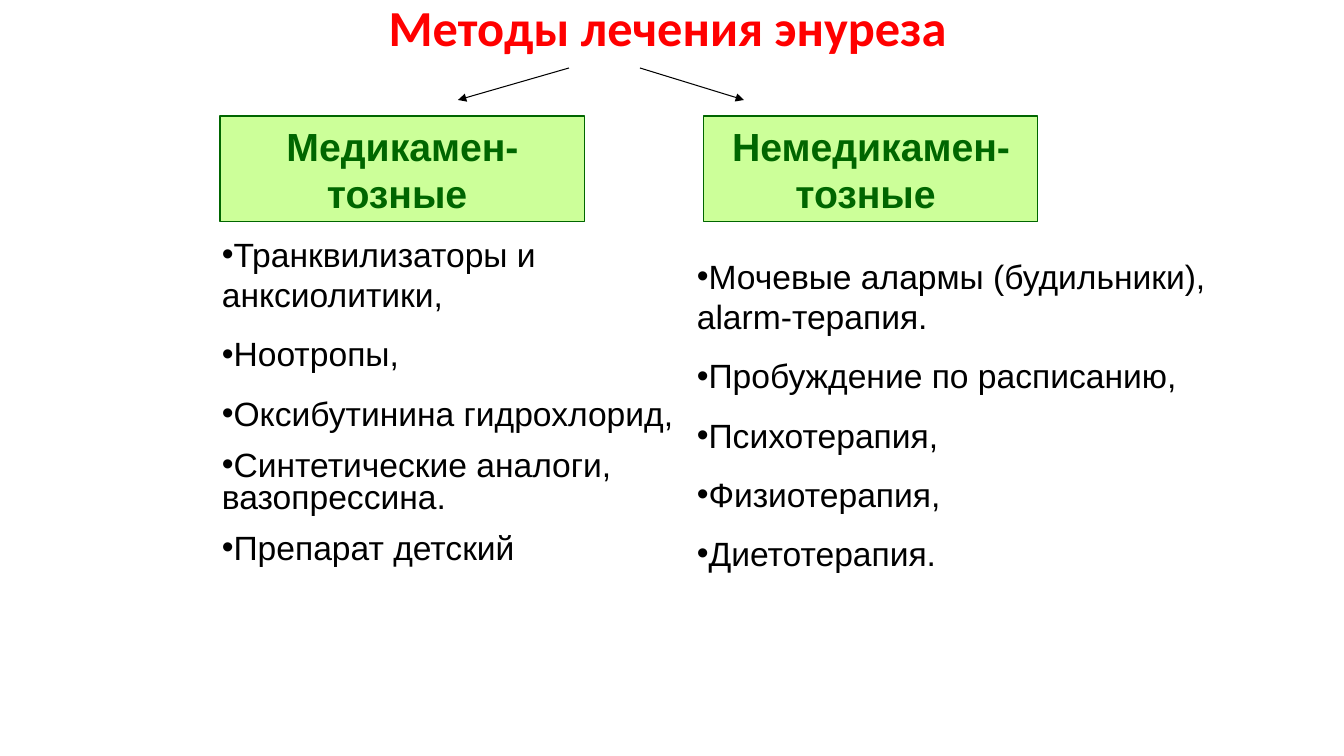
from lxml import etree
from pptx import Presentation
from pptx.dml.color import RGBColor
from pptx.enum.shapes import MSO_CONNECTOR, MSO_SHAPE
from pptx.enum.text import MSO_ANCHOR, PP_ALIGN
from pptx.oxml.ns import qn
from pptx.util import Pt

RECT = MSO_SHAPE.RECTANGLE
LINE = MSO_CONNECTOR.STRAIGHT
MID, TOP = MSO_ANCHOR.MIDDLE, MSO_ANCHOR.TOP
CENTER, LEFT = PP_ALIGN.CENTER, PP_ALIGN.LEFT
SCALE = 914400 / 100.8  # EMU per px


def px(*vals):
    return [round(v * SCALE) for v in vals]


def color(code):
    return RGBColor.from_string(code)


deck = Presentation()
deck.slide_width, deck.slide_height = px(1344, 756)
slide = deck.slides.add_slide(deck.slide_layouts[6])
shapes = slide.shapes

# Formats: font, ink, alignment and anchor of each kind of text
TITLE = {"font": {"name": "Calibri", "size": Pt(36), "bold": True},
         "ink": "FF0000", "anchor": MID,
         "para": {"alignment": CENTER, "line_spacing": 0.9}}
HEAD = {"font": {"name": "Arial", "size": Pt(28), "bold": True},
        "ink": "006600", "anchor": MID, "para": {"alignment": CENTER}}
LIST = {"font": {"name": "Arial", "size": Pt(24), "bold": False},
        "ink": "000000", "anchor": TOP,
        "para": {"alignment": LEFT, "space_before": Pt(13.4)}}

# Every text block: format, box in px, lines
blocks = [
    (TITLE, (220, 0, 907, 61), ["Методы лечения энуреза "]),
    (HEAD, (220, 116, 365, 106), ["Медикамен-тозные "]),
    (HEAD, (704, 116, 334, 106), ["Немедикамен-тозные "]),
    (LIST, (687, 251, 566, 397), [
        "Мочевые алармы (будильники), alarm-терапия.",
        "Пробуждение по расписанию,", "Психотерапия,",
        "Физиотерапия,", "Диетотерапия."]),
    (LIST, (212, 229, 476, 352), [
        "Транквилизаторы и анксиолитики,", "Ноотропы,",
        "Оксибутинина гидрохлорид,",
        "Синтетические аналоги, вазопрессина.", "Препарат детский"]),
]
tight = blocks[-1][2][-2:]  # lines set closer together

for style, box, lines in blocks:
    if style is HEAD:
        shape = shapes.add_shape(RECT, *px(*box))
        shape.shadow.inherit = False
        shape.fill.solid()
        shape.fill.fore_color.rgb = color("CCFF99")
        shape.line.color.rgb = color("006600")
        shape.line.width = Pt(0.75)
    else:
        shape = shapes.add_textbox(*px(*box))
    frame = shape.text_frame
    frame.word_wrap = True
    frame.vertical_anchor = style["anchor"]
    frame.text = "\n".join(lines)
    for para in frame.paragraphs:
        for key, val in style["para"].items():
            setattr(para, key, val)
        if para.text in tight:
            para.line_spacing = 0.8
        font = para.runs[0].font
        for key, val in style["font"].items():
            setattr(font, key, val)
        font.color.rgb = color(style["ink"])
        if style is LIST:
            props = para._p.get_or_add_pPr()
            props.set("marL", "0")
            props.set("indent", "0")
            etree.SubElement(props, qn("a:buFont")).set("typeface", "Arial")
            etree.SubElement(props, qn("a:buChar")).set("char", "•")

# Arrows from the title to the two headings
for start, end in ((569, 458), (640, 744)):
    arrow = shapes.add_connector(LINE, *px(start, 68, end, 100))
    arrow.line.color.rgb = color("000000")
    arrow.line.width = Pt(0.75)
    tip = etree.SubElement(arrow.line._get_or_add_ln(), qn("a:tailEnd"))
    tip.set("type", "triangle")
    etree.SubElement(arrow._element.spPr, qn("a:effectLst"))

deck.save("out.pptx")
